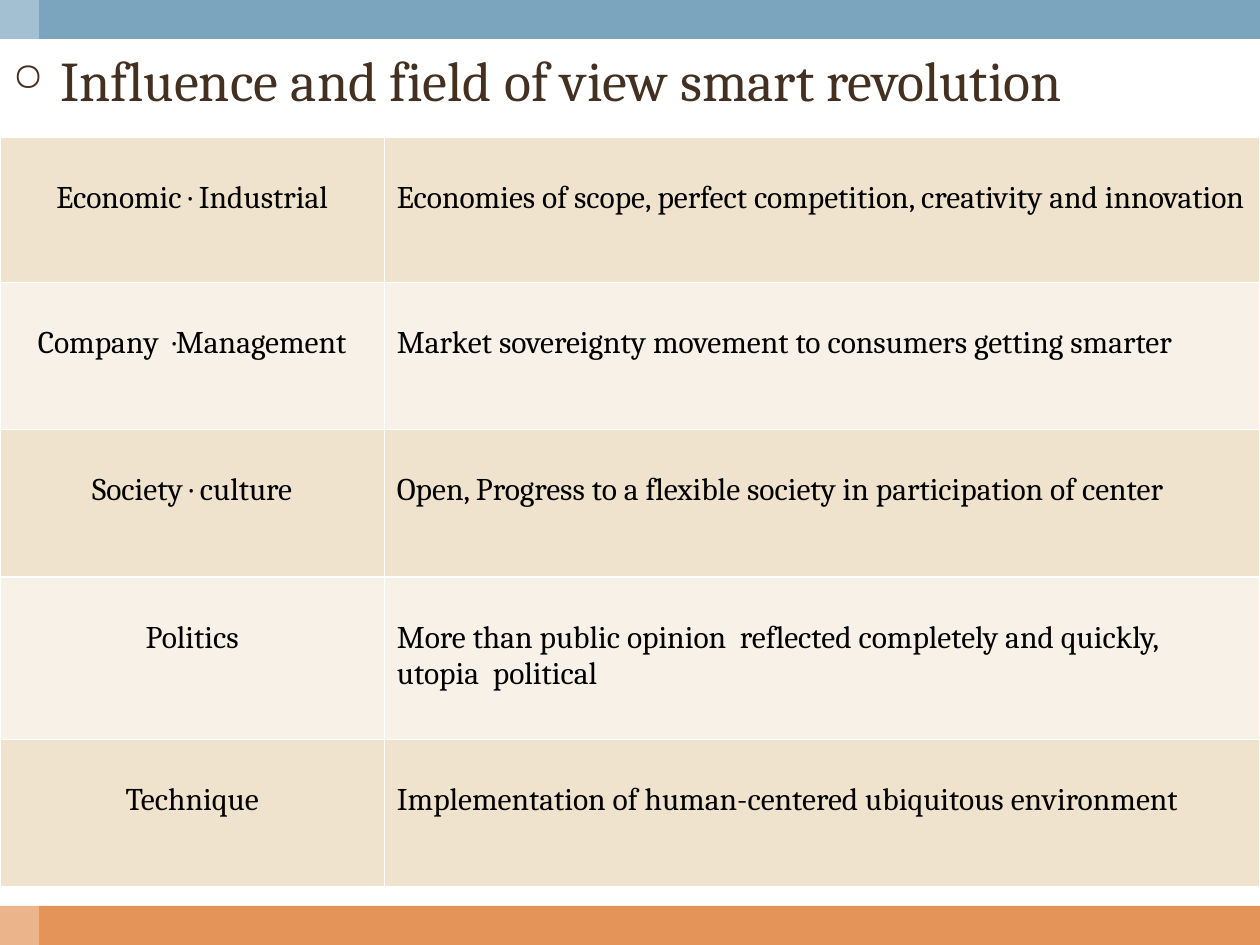
import pptx
import pptx.util
import pptx.dml.color
import pptx.enum.shapes
import pptx.enum.text
import pptx.oxml
import pptx.oxml.ns
import lxml.etree

Inches = pptx.util.Inches
Align = pptx.enum.text.PP_ALIGN
FONT = "Cambria"
BAR = 0.31
BAND_FILLS = ["EFE3CD", "F7F1E8"]
COLUMN_WIDTHS = [3.05, 6.95]
ROW_HEIGHTS = [1.15, 1.17, 1.17, 1.29, 1.17]
FIELDS = [
    ("Economic · Industrial", "Economies of scope, perfect competition, creativity and innovation"),
    ("Company  ·Management", "Market sovereignty movement to consumers getting smarter"),
    ("Society · culture", "Open, Progress to a flexible society in participation of center"),
    ("Politics", "More than public opinion  reflected completely and quickly, utopia  political"),
    ("Technique", "Implementation of human-centered ubiquitous environment"),
]


def rgb(value):
    return pptx.dml.color.RGBColor.from_string(value)


def add_xml(parent, tag, **attributes):
    child = lxml.etree.SubElement(parent, pptx.oxml.ns.qn(tag))
    for key, value in attributes.items():
        child.set(key, str(value))
    return child


def style_text(paragraph, size, color, align):
    paragraph.alignment = align
    for run in paragraph.runs:
        run.font.name = FONT
        run.font.size = pptx.util.Pt(size)
        run.font.color.rgb = rgb(color)


def add_bar(slide, left, top, width, height, color, opacity=100):
    bar = slide.shapes.add_shape(
        pptx.enum.shapes.MSO_SHAPE.RECTANGLE,
        Inches(left), Inches(top), Inches(width), Inches(height))
    bar.shadow.inherit = False
    bar.line.fill.background()
    bar.fill.solid()
    bar.fill.fore_color.rgb = rgb(color)
    if opacity < 100:
        tint = bar._element.spPr.find(".//" + pptx.oxml.ns.qn("a:srgbClr"))
        add_xml(tint, "a:alpha", val=opacity * 1000)


def set_heading(slide, text):
    heading = slide.shapes.title
    heading.left, heading.top = Inches(0), Inches(BAR)
    heading.width, heading.height = Inches(9.92), Inches(0.75)
    frame = heading.text_frame
    frame.text = text
    frame.word_wrap = True
    frame.auto_size = pptx.enum.text.MSO_AUTO_SIZE.NONE
    frame.vertical_anchor = pptx.enum.text.MSO_ANCHOR.TOP
    paragraph = frame.paragraphs[0]
    style_text(paragraph, 32, "433021", Align.LEFT)
    properties = paragraph._p.get_or_add_pPr()
    indent = Inches(0.38)
    properties.set("marL", str(indent))
    properties.set("indent", str(-indent))
    add_xml(properties, "a:buSzPct", val=70000)
    add_xml(properties, "a:buChar", char="○")
    slide.shapes._spTree.append(heading._element)


def set_cell(cell, text, fill, align):
    cell.text_frame.text = text
    cell.margin_top = Inches(0.34)
    style_text(cell.text_frame.paragraphs[0], 18, "000000", align)
    properties = cell._tc.get_or_add_tcPr()
    for side in ("a:lnL", "a:lnR", "a:lnT", "a:lnB"):
        border = add_xml(properties, side, w=pptx.util.Pt(1))
        add_xml(add_xml(border, "a:solidFill"), "a:srgbClr", val="FFFFFF")
    cell.fill.solid()
    cell.fill.fore_color.rgb = rgb(fill)


def add_field_table(slide):
    table = slide.shapes.add_table(
        len(FIELDS), len(COLUMN_WIDTHS), Inches(0), Inches(1.09),
        Inches(sum(COLUMN_WIDTHS)), Inches(sum(ROW_HEIGHTS))).table
    table.first_row = False
    for column, width in zip(table.columns, COLUMN_WIDTHS):
        column.width = Inches(width)
    for index, (field, influence) in enumerate(FIELDS):
        table.rows[index].height = Inches(ROW_HEIGHTS[index])
        fill = BAND_FILLS[index % 2]
        set_cell(table.cell(index, 0), field, fill, Align.CENTER)
        set_cell(table.cell(index, 1), influence, fill, Align.LEFT)


def main():
    deck = pptx.Presentation()
    deck.slide_width, deck.slide_height = Inches(10), Inches(7.5)
    slide = deck.slides.add_slide(deck.slide_layouts[5])
    add_bar(slide, 0, 7.5 - BAR, 10, BAR, "E49458")
    add_bar(slide, 0, 0, 10, BAR, "7BA5BE")
    add_bar(slide, 0, 0, BAR, 7.5, "FFFFFF", opacity=30)
    set_heading(slide, "Influence and field of view smart revolution")
    add_field_table(slide)
    deck.save("out.pptx")


if __name__ == "__main__":
    main()
